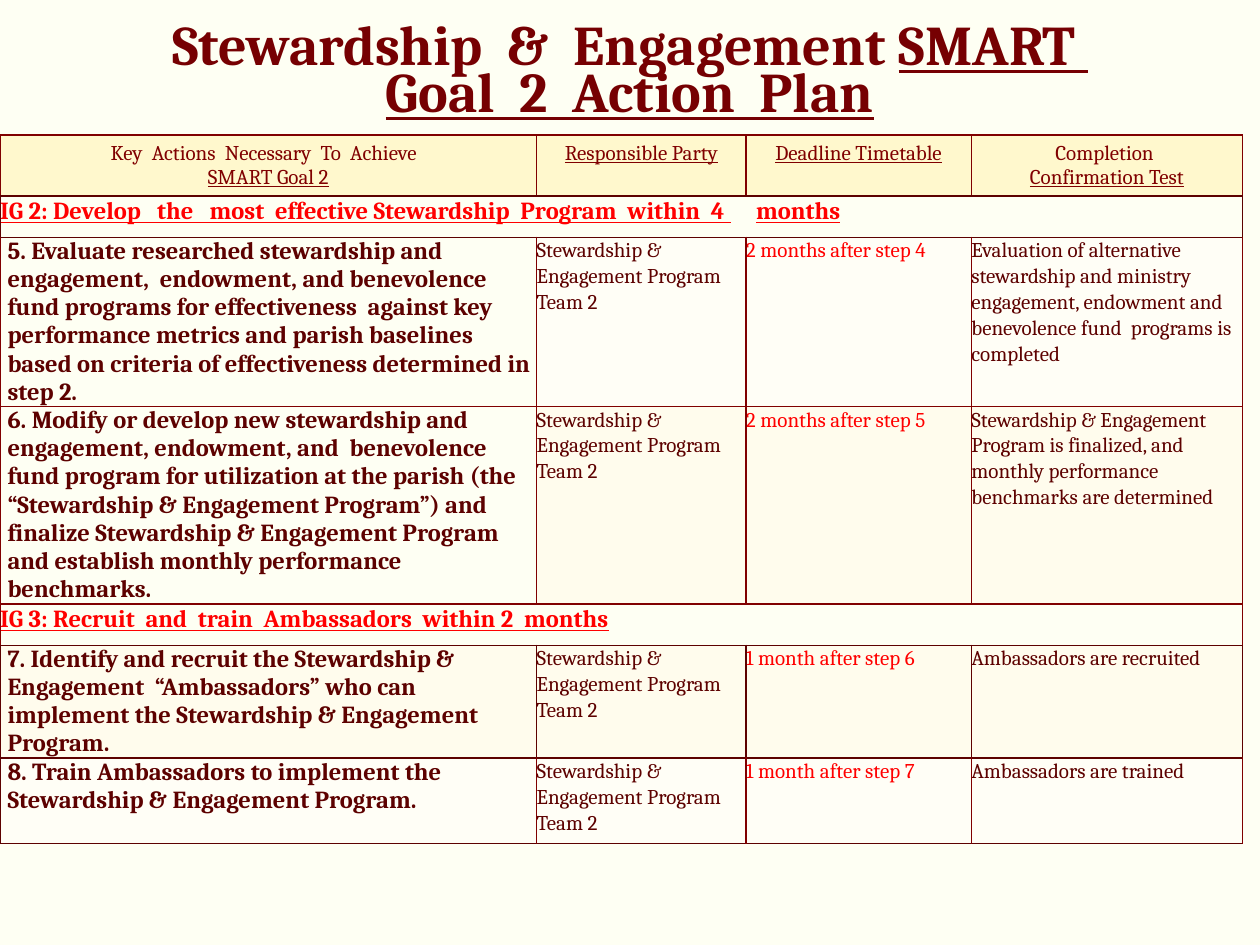
from pptx import Presentation
from pptx.dml.color import RGBColor
from pptx.enum.text import MSO_ANCHOR as Anchor, PP_ALIGN as Align
from pptx.oxml import parse_xml
from pptx.oxml.ns import nsdecls
from pptx.util import Inches, Pt

DARK, MAROON, RED = "5D0100", "800000", "FF0000"
CREAM, PALE, SAND = "FFF8CD", "FFFEF6", "FFFCED"
MIXED = (MAROON, MAROON, MAROON, DARK)
TOPPED = (MAROON, MAROON, DARK, MAROON)
CLOSED = (MAROON, MAROON, DARK, DARK)
CORNER = (DARK, MAROON, DARK, DARK)
COLS = (4.26, 1.66, 1.79, 2.15)
ROWS = (0.38, 0.33, 0.33, 0.33, 0.33, 0.83, 0.68)
HEADS = (
    (("Key  Actions  Necessary  To  Achieve  ", False), ("SMART Goal 2", True)),
    (("Responsible Party", True),),
    (("Deadline Timetable", True),),
    (("Completion ", False), ("Confirmation Test", True)),
)
GOALS = (
    (1, "IG 2: Develop   the   most  effective Stewardship  Program  within  4 \tmonths", (DARK,) * 4),
    (4, "IG 3: Recruit  and  train  Ambassadors  within 2  months", MIXED),
)
STEPS = (
    (2, None, PALE, TOPPED, TOPPED, (
        "5. Evaluate researched stewardship and engagement,  endowment, and benevolence fund programs "
        "for effectiveness  against key performance metrics and parish baselines based on criteria of "
        "effectiveness determined in step 2.",
        "Stewardship & Engagement Program  Team 2",
        "2 months after step 4",
        "Evaluation of alternative stewardship and ministry engagement, endowment and benevolence fund  "
        "programs is completed")),
    (3, None, SAND, (MAROON,) * 4, (MAROON,) * 4, (
        "6. Modify or develop new stewardship and engagement, endowment, and  benevolence fund program "
        "for utilization at the parish (the “Stewardship & Engagement Program”) and finalize "
        "Stewardship & Engagement Program and establish monthly performance benchmarks.",
        "Stewardship & Engagement Program  Team 2",
        "2 months after step 5",
        "Stewardship & Engagement Program is finalized, and monthly performance benchmarks are determined")),
    (5, SAND, SAND, (DARK,) * 4, (DARK,) * 4, (
        "7. Identify and recruit the Stewardship & Engagement  “Ambassadors” who can implement the "
        "Stewardship & Engagement Program.",
        "Stewardship & Engagement Program Team 2",
        "1 month after step 6",
        "Ambassadors are recruited")),
    (6, PALE, PALE, CORNER, CLOSED, (
        "8. Train Ambassadors to implement the Stewardship & Engagement Program.",
        "Stewardship & Engagement Program Team 2",
        "1 month after step 7",
        "Ambassadors are trained")),
)


def color(code):
    return RGBColor.from_string(code)


class Plan:
    """Holds the style and the current slide of the action plan."""

    face = "Cambria"

    def __init__(self, slide, back):
        self.slide = slide
        slide.background.fill.solid()
        slide.background.fill.fore_color.rgb = color(back)

    def style(self, para, size, code, bold=False, under=None):
        font = para.font
        font.name, font.size, font.bold = self.face, Pt(size), bold
        font.color.rgb = color(code)
        if under is not None:
            font.underline = under

    def title(self, box, parts, size, code):
        frame = self.slide.shapes.add_textbox(*map(Inches, box)).text_frame
        frame.word_wrap, frame.vertical_anchor = True, Anchor.MIDDLE
        para = frame.paragraphs[0]
        para.alignment, para.line_spacing = Align.CENTER, 0.7
        for text, under in parts:
            run = para.add_run()
            run.text, run.font.underline = text, under
        self.style(para, size, code, True)

    def table(self, box, cols, rows):
        shape = self.slide.shapes.add_table(len(rows), len(cols), *map(Inches, box))
        grid = shape.table
        grid.first_row = grid.horz_banding = False
        for col, wide in zip(grid.columns, cols):
            col.width = Inches(wide)
        for row, high in zip(grid.rows, rows):
            row.height = Inches(high)
        shape.height = Inches(box[3])
        return grid

    def cell(self, cell, pad, fill, edges):
        cell.margin_left = cell.margin_right = Inches(pad)
        cell.margin_top = cell.margin_bottom = Inches(pad)
        props = cell._tc.get_or_add_tcPr()
        for side, code in zip("LRTB", edges):
            props.append(parse_xml(
                f'<a:ln{side} {nsdecls("a")} w="{Pt(1)}"><a:solidFill>'
                f'<a:srgbClr val="{code}"/></a:solidFill></a:ln{side}>'))
        if fill:
            cell.fill.solid()
            cell.fill.fore_color.rgb = color(fill)
        else:
            cell.fill.background()

    def head(self, cell, lines):
        self.cell(cell, 0.05, CREAM, MIXED)
        frame = cell.text_frame
        for n, (text, under) in enumerate(lines):
            para = frame.add_paragraph() if n else frame.paragraphs[0]
            para.text, para.alignment = text, Align.CENTER
            self.style(para, 12, MAROON, under=under)

    def goal(self, cells, text, edges):
        for cell in cells:
            self.cell(cell, 0, None, edges)
        cells[0].merge(cells[-1])
        para = cells[0].text_frame.paragraphs[0]
        para.text, para.line_spacing = text, 1.07
        self.style(para, 14, RED, True, True)

    def step(self, cell, text, fill, edges):
        self.cell(cell, 0, fill, edges)
        para = cell.text_frame.paragraphs[0]
        para.text, para.level = text, 1
        props = para._p.get_or_add_pPr()
        props.set("marL", str(Inches(0.06)))
        props.set("indent", "0")
        self.style(para, 14, DARK, True)

    def note(self, cell, text, fill, edges, code):
        self.cell(cell, 0, fill, edges)
        para = cell.text_frame.paragraphs[0]
        para.text, para.line_spacing = text, 1.07
        self.style(para, 12, code)


def main():
    deck = Presentation()
    deck.slide_width, deck.slide_height = Inches(10), Inches(7.5)
    plan = Plan(deck.slides.add_slide(deck.slide_layouts[6]), "FEFFF3")
    grid = plan.table((0, 1.07, 9.87, 6.28), COLS, ROWS)
    for col, lines in enumerate(HEADS):
        plan.head(grid.cell(0, col), lines)
    for row, text, edges in GOALS:
        plan.goal([grid.cell(row, col) for col in range(len(COLS))], text, edges)
    for row, first, fill, lead, edges, texts in STEPS:
        plan.step(grid.cell(row, 0), texts[0], first, lead)
        for col, code in enumerate((DARK, RED, DARK), 1):
            plan.note(grid.cell(row, col), texts[col], fill, edges, code)
    parts = (("Stewardship  &  Engagement ", False), ("SMART  Goal  2  Action  Plan", True))
    plan.title((1.09, -0.03, 7.82, 1.25), parts, 32, "760002")
    deck.save("out.pptx")


if __name__ == "__main__":
    main()
